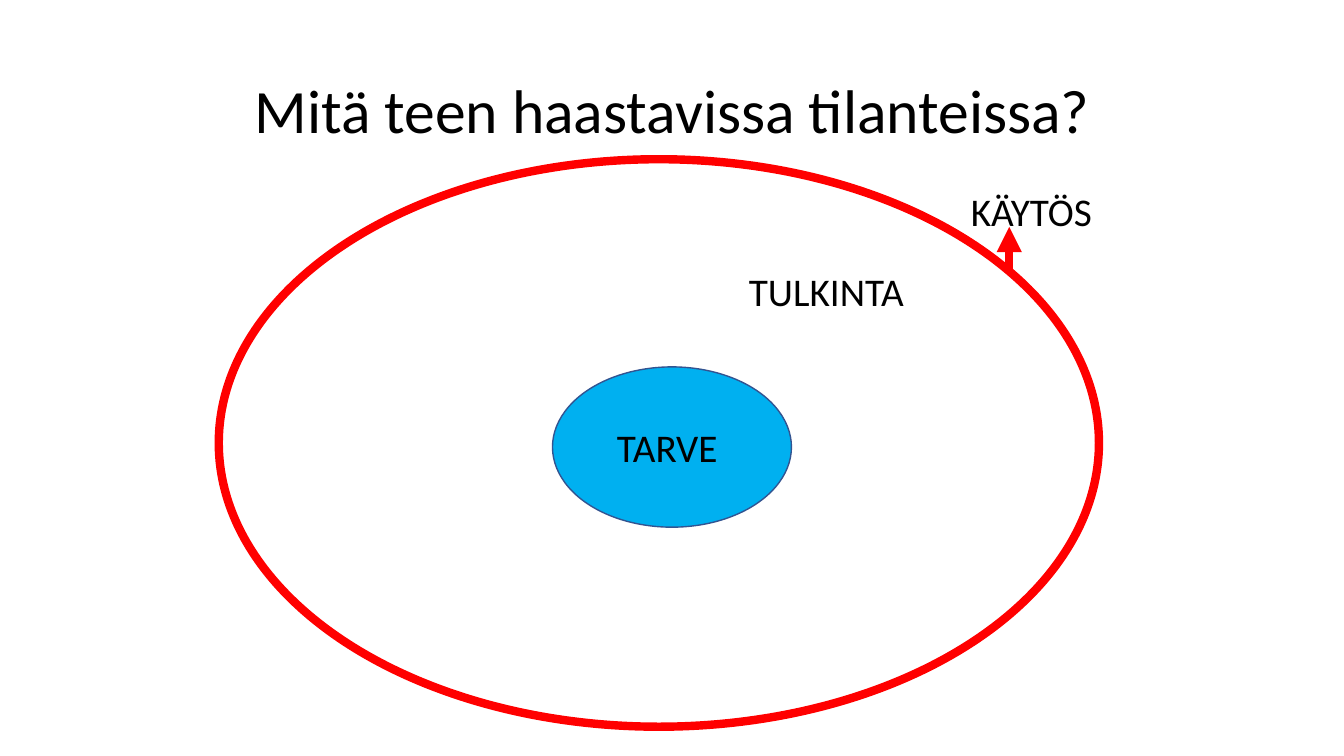
import pptx
import pptx.util
import pptx.dml.color
import pptx.enum.shapes
import pptx.enum.text
import pptx.oxml
import pptx.oxml.ns
from pptx.util import Inches

COLOURS = {
    "text": "000000",
    "need": "00B0F0",
    "need_line": "325491",
    "behaviour": "FF0000",
}


class SlideBuilder:
    """Holds the shared text style and the slide being built."""

    font_name = "Calibri"

    def __init__(self, slide):
        self.slide = slide

    def colour(self, name):
        return pptx.dml.color.RGBColor.from_string(COLOURS[name])

    def style_line(self, shape, colour, width):
        shape.line.color.rgb = self.colour(colour)
        shape.line.width = pptx.util.Pt(width)

    def text(self, content, left, top, width, height, size=28, centred=False):
        box = self.slide.shapes.add_textbox(
            Inches(left), Inches(top), Inches(width), Inches(height))
        frame = box.text_frame
        frame.word_wrap = True
        paragraph = frame.paragraphs[0]
        if centred:
            frame.vertical_anchor = pptx.enum.text.MSO_ANCHOR.MIDDLE
            paragraph.alignment = pptx.enum.text.PP_ALIGN.CENTER
            paragraph.line_spacing = 0.9
        run = paragraph.add_run()
        run.text = content
        run.font.name = self.font_name
        run.font.size = pptx.util.Pt(size)
        run.font.color.rgb = self.colour("text")

    def ellipse(self, left, top, width, height, line, line_width, fill=None):
        shape = self.slide.shapes.add_shape(
            pptx.enum.shapes.MSO_SHAPE.OVAL,
            Inches(left), Inches(top), Inches(width), Inches(height))
        shape.shadow.inherit = False
        if fill:
            shape.fill.solid()
            shape.fill.fore_color.rgb = self.colour(fill)
        else:
            shape.fill.background()
        self.style_line(shape, line, line_width)

    def arrow(self, start, end, colour, width):
        connector = self.slide.shapes.add_connector(
            pptx.enum.shapes.MSO_CONNECTOR.STRAIGHT,
            *(Inches(value) for value in (*start, *end)))
        self.style_line(connector, colour, width)
        namespace = pptx.oxml.ns.nsdecls("a")
        connector.line._get_or_add_ln().append(
            pptx.oxml.parse_xml(f'<a:tailEnd {namespace} type="triangle"/>'))
        connector._element.spPr.append(
            pptx.oxml.parse_xml(f"<a:effectLst {namespace}/>"))


def main():
    presentation = pptx.Presentation()
    presentation.slide_width = Inches(13.33)
    presentation.slide_height = Inches(7.5)
    builder = SlideBuilder(
        presentation.slides.add_slide(presentation.slide_layouts[6]))

    builder.text("Mitä teen haastavissa tilanteissa?",
                 0.92, 0.4, 11.5, 1.45, size=44, centred=True)
    builder.ellipse(5.48, 3.64, 2.37, 1.59, "need_line", 1, fill="need")
    builder.text("KÄYTÖS", 9.53, 1.81, 1.48, 0.57)
    builder.text("TARVE", 6.02, 4.15, 1.24, 0.57)
    builder.text("TULKINTA", 7.33, 2.6, 1.77, 0.57)
    builder.ellipse(2.17, 1.58, 8.73, 5.63, "behaviour", 6)
    builder.arrow((10.01, 2.68), (10.01, 2.25), "behaviour", 6)

    presentation.save("out.pptx")


if __name__ == "__main__":
    main()
